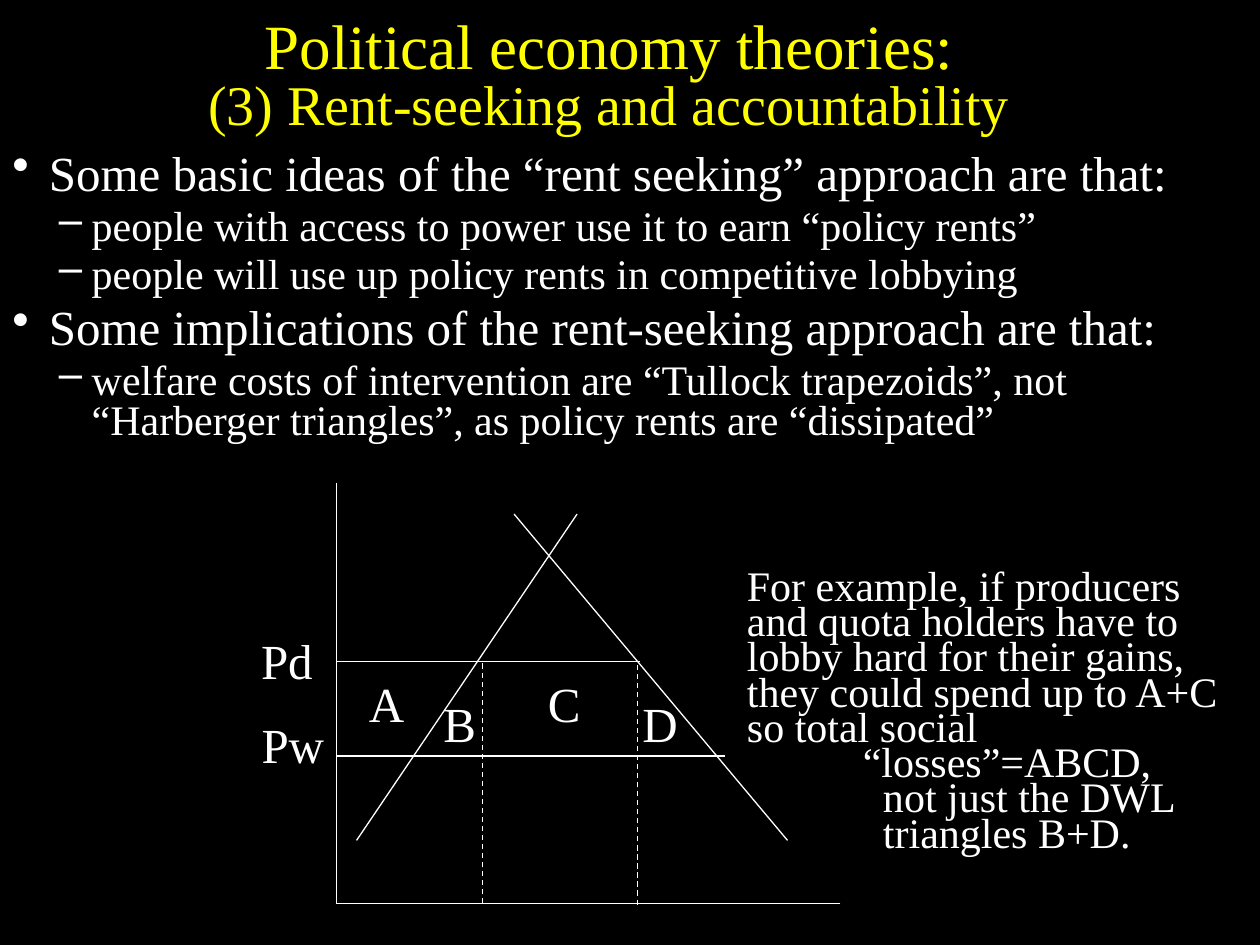
from dataclasses import dataclass
from typing import Optional

from lxml.etree import SubElement
from pptx import Presentation
from pptx.dml.color import RGBColor
from pptx.enum.dml import MSO_LINE
from pptx.enum.shapes import MSO_CONNECTOR
from pptx.enum.text import MSO_ANCHOR, MSO_AUTO_SIZE, PP_ALIGN
from pptx.oxml.ns import qn
from pptx.util import Inches, Pt


@dataclass(frozen=True)
class Theme:
    font: str = "Times New Roman"
    background: RGBColor = RGBColor(0x00, 0x00, 0x00)
    title: RGBColor = RGBColor(0xFF, 0xFF, 0x00)
    ink: RGBColor = RGBColor(0xFF, 0xFF, 0xFF)
    title_size: int = 36
    subtitle_size: int = 32
    large: int = 28
    small: int = 24
    line_width: float = 0.75


THEME = Theme()


@dataclass(frozen=True)
class Box:
    left: float
    top: float
    width: float
    height: float


@dataclass(frozen=True)
class Line:
    text: str
    size: int
    margin: float = 0
    hanging: float = 0
    bullet: Optional[str] = None
    before: float = 0
    spacing: float = 0.7
    align: PP_ALIGN = PP_ALIGN.LEFT


@dataclass(frozen=True)
class Segment:
    x1: float
    y1: float
    x2: float
    y2: float
    dashed: bool = False


@dataclass(frozen=True)
class Label:
    text: str
    left: float
    top: float
    width: float = 0.33
    align: PP_ALIGN = PP_ALIGN.LEFT


def topic(text: str) -> Line:
    return Line(text, THEME.large, 0.29, 0.29, "•", 5.6, 0.8)


def detail(text: str) -> Line:
    return Line(text, THEME.small, 0.63, 0.26, "–", 4.8, 0.8)


# Content
TITLE = Line("Political economy theories:\v(3) Rent-seeking and accountability",
             THEME.title_size, spacing=0.8, align=PP_ALIGN.CENTER)

IDEAS = [
    topic("Some basic ideas of the “rent seeking” approach are that:"),
    detail("people with access to power use it to earn “policy rents”"),
    detail("people will use up policy rents in competitive lobbying"),
    topic("Some implications of the rent-seeking approach are that:"),
    detail("welfare costs of intervention are “Tullock trapezoids”, not "
           "“Harberger triangles”, as policy rents are “dissipated”"),
]

EXAMPLE = [
    Line("For example, if producers and quota holders have to lobby hard for "
         "their gains, they could spend up to A+C so total social",
         THEME.small, before=12),
    Line("“losses”=ABCD,", THEME.small, 0.92),
    Line("not just the DWL", THEME.small, 1.08),
    Line("triangles B+D.", THEME.small, 1.08),
]

# Diagram geometry
AXIS_X, AXIS_Y = 2.67, 7.17
DOMESTIC_PRICE, WORLD_PRICE = 5.25, 6
CURVE_TOP, CURVE_BOTTOM = 4.08, 6.67

SEGMENTS = [
    Segment(AXIS_X, 3.83, AXIS_X, AXIS_Y),
    Segment(6.67, AXIS_Y, AXIS_X, AXIS_Y),
    Segment(4.58, CURVE_TOP, 2.83, CURVE_BOTTOM),
    Segment(6.25, CURVE_BOTTOM, 4.08, CURVE_TOP),
    Segment(5.75, WORLD_PRICE, AXIS_X, WORLD_PRICE),
    Segment(5.08, DOMESTIC_PRICE, AXIS_X, DOMESTIC_PRICE),
    Segment(3.83, AXIS_Y, 3.83, DOMESTIC_PRICE, True),
    Segment(5.06, 7.18, 5.06, 5.27, True),
]

LABELS = [
    Label("A", 2.83, 5.42),
    Label("B", 3.42, 5.58),
    Label("C", 4.25, 5.42),
    Label("D", 5, 5.58),
    Label("Pd", 1.83, 5.08, 0.75, PP_ALIGN.RIGHT),
    Label("Pw", 1.92, 5.75, 0.75, PP_ALIGN.RIGHT),
]


def format_paragraph(paragraph, line: Line, color: RGBColor) -> None:
    paragraph.text = line.text
    paragraph.alignment = line.align
    paragraph.line_spacing = line.spacing
    paragraph.space_before = Pt(line.before)
    for run in paragraph.runs:
        run.font.name = THEME.font
        run.font.size = Pt(line.size)
        run.font.color.rgb = color
    properties = paragraph._p.get_or_add_pPr()
    properties.set("marL", str(Inches(line.margin)))
    properties.set("indent", str(Inches(-line.hanging)))
    if line.bullet:
        SubElement(properties, qn("a:buChar")).set("char", line.bullet)


def add_text(slide, box: Box, lines: list[Line], color: RGBColor = THEME.ink,
             grow: bool = False):
    shape = slide.shapes.add_textbox(Inches(box.left), Inches(box.top),
                                     Inches(box.width), Inches(box.height))
    text_frame = shape.text_frame
    text_frame.word_wrap = True
    text_frame.auto_size = (MSO_AUTO_SIZE.SHAPE_TO_FIT_TEXT if grow
                            else MSO_AUTO_SIZE.NONE)
    text_frame.text = "\n".join(line.text for line in lines)
    for paragraph, line in zip(text_frame.paragraphs, lines):
        format_paragraph(paragraph, line, color)
    return shape


def add_segment(slide, segment: Segment) -> None:
    connector = slide.shapes.add_connector(
        MSO_CONNECTOR.STRAIGHT, Inches(segment.x1), Inches(segment.y1),
        Inches(segment.x2), Inches(segment.y2))
    connector.line.color.rgb = THEME.ink
    connector.line.width = Pt(THEME.line_width)
    if segment.dashed:
        connector.line.dash_style = MSO_LINE.DASH
    SubElement(connector._element.spPr, qn("a:effectLst"))


def main() -> None:
    presentation = Presentation()
    presentation.slide_width = Inches(10)
    presentation.slide_height = Inches(7.5)
    slide = presentation.slides.add_slide(presentation.slide_layouts[6])
    slide.background.fill.solid()
    slide.background.fill.fore_color.rgb = THEME.background

    # Title and bullets
    title = add_text(slide, Box(0, 0, 9.67, 1.25), [TITLE], THEME.title)
    title.text_frame.vertical_anchor = MSO_ANCHOR.MIDDLE
    title.text_frame.paragraphs[0].runs[1].font.size = Pt(THEME.subtitle_size)
    add_text(slide, Box(0, 1.17, 10, 2.67), IDEAS)

    # Supply and demand diagram
    for segment in SEGMENTS:
        add_segment(slide, segment)
    for label in LABELS:
        add_text(slide, Box(label.left, label.top, label.width, 0.43),
                 [Line(label.text, THEME.large, before=14, align=label.align)],
                 grow=True)

    # Worked example
    add_text(slide, Box(5.83, 4.5, 4.17, 2.36), EXAMPLE, grow=True)
    presentation.save("out.pptx")


if __name__ == "__main__":
    main()
